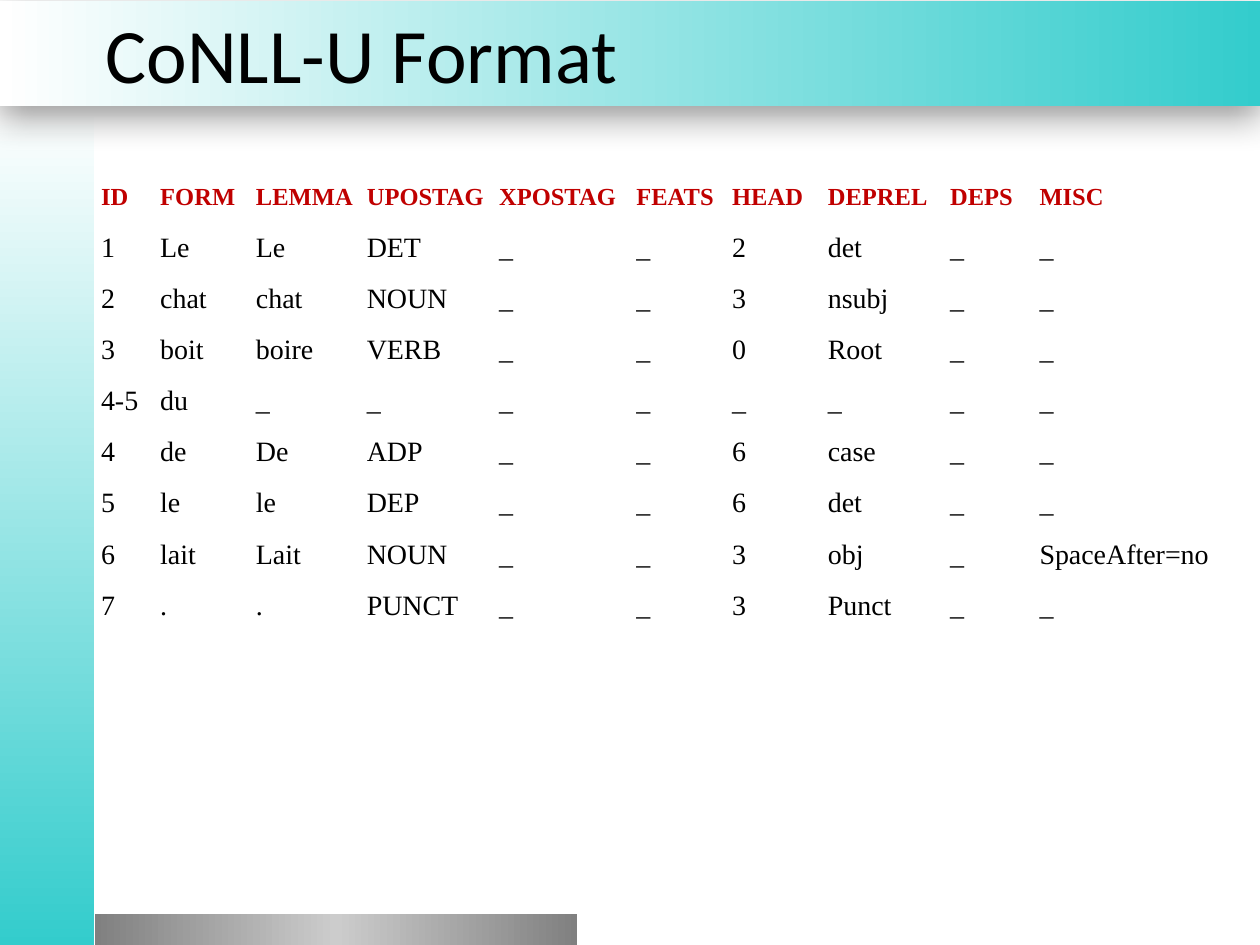
from lxml import etree
from pptx import Presentation
from pptx.dml.color import RGBColor
from pptx.enum.shapes import MSO_SHAPE as SHAPE
from pptx.enum.text import MSO_ANCHOR as ANCHOR
from pptx.oxml.ns import qn
from pptx.util import Pt

TEAL = [(0, "FFFFFF"), (100, "33CCCC")]
GREY = [(0, "808080"), (50, "CCCCCC"), (100, "808080")]
COLUMN_WIDTHS = [33.84, 54.72, 63.36, 75.6, 78.48, 54.72, 54.72, 69.84, 51.12, 132.48]
ROWS = [line.split() for line in (
    "ID FORM LEMMA UPOSTAG XPOSTAG FEATS HEAD DEPREL DEPS MISC",
    "1 Le Le DET _ _ 2 det _ _",
    "2 chat chat NOUN _ _ 3 nsubj _ _",
    "3 boit boire VERB _ _ 0 Root _ _",
    "4-5 du _ _ _ _ _ _ _ _",
    "4 de De ADP _ _ 6 case _ _",
    "5 le le DEP _ _ 6 det _ _",
    "6 lait Lait NOUN _ _ 3 obj _ SpaceAfter=no",
    "7 . . PUNCT _ _ 3 Punct _ _",
)]


def rgb(value):
    """Turn a hex string into a colour."""
    return RGBColor.from_string(value)


def style_run(r, name, size, color, bold=False):
    """Set the font of a run."""
    r.font.name = name
    r.font.size = Pt(size)
    r.font.bold = bold
    r.font.color.rgb = rgb(color)


def add_color(parent, value):
    """Append a hex colour element to an XML parent."""
    return etree.SubElement(parent, qn("a:srgbClr"), val=value)


def add_band(slide, x, y, w, h, stops, angle=0):
    """Draw a borderless rectangle with a linear gradient."""
    s = slide.shapes.add_shape(SHAPE.RECTANGLE, Pt(x), Pt(y), Pt(w), Pt(h))
    s.shadow.inherit = False
    s.line.fill.background()
    s.fill.gradient()
    s.fill.gradient_angle = angle
    stop_list = s._element.spPr.find(".//" + qn("a:gsLst"))
    stop_list.clear()
    for position, value in stops:
        stop = etree.SubElement(stop_list, qn("a:gs"), pos=str(position * 1000))
        add_color(stop, value)
    return s


def add_shadow(s, blur, distance, opacity):
    """Give a shape a soft black shadow below it."""
    effects = s._element.spPr.find(qn("a:effectLst"))
    shadow = etree.SubElement(effects, qn("a:outerShdw"), blurRad=str(Pt(blur)),
                              dist=str(Pt(distance)), dir="5400000", rotWithShape="0")
    etree.SubElement(add_color(shadow, "000000"), qn("a:alpha"), val=str(opacity * 1000))


def add_background(slide, w, h):
    """Draw the side, header and footer bands."""
    side = 54
    add_band(slide, 0, 62, side, h - 62, TEAL, 270)
    header = add_band(slide, 0, 0.7, w, 60, TEAL)
    add_shadow(header, 20, 6, 40)
    add_band(slide, side, h - 18, 276, 18, GREY)


def add_title(slide, x, y, w, h, text):
    """Write the slide title, centred vertically in its box."""
    tf = slide.shapes.add_textbox(Pt(x), Pt(y), Pt(w), Pt(h)).text_frame
    tf.word_wrap = True
    tf.vertical_anchor = ANCHOR.MIDDLE
    tf.text = text
    style_run(tf.paragraphs[0].runs[0], "Calibri", 44, "000000")


def fill_cell(cell, text, is_header):
    """Write one unfilled table cell."""
    cell.fill.background()
    cell.vertical_anchor = ANCHOR.MIDDLE
    cell.margin_left = cell.margin_right = Pt(3.75)
    cell.margin_top = cell.margin_bottom = Pt(3.75)
    cell.text = text
    size, color = (14, "C00000") if is_header else (16, "000000")
    style_run(cell.text_frame.paragraphs[0].runs[0], "Times New Roman", size, color, is_header)


def add_token_table(slide, x, y, h):
    """Place the table of annotated tokens."""
    frame = slide.shapes.add_table(len(ROWS), len(COLUMN_WIDTHS), Pt(x), Pt(y),
                                   Pt(sum(COLUMN_WIDTHS)), Pt(h))
    table = frame.table
    table.first_row = table.horz_banding = False
    for column, width in zip(table.columns, COLUMN_WIDTHS):
        column.width = Pt(width)
    for i, row in enumerate(ROWS):
        table.rows[i].height = Pt(h / len(ROWS))
        for j, text in enumerate(row):
            fill_cell(table.cell(i, j), text, i == 0)


def main():
    """Build and save the slide."""
    prs = Presentation()
    prs.slide_width, prs.slide_height = Pt(720), Pt(540)
    slide = prs.slides.add_slide(prs.slide_layouts[6])
    add_background(slide, 720, 540)
    add_title(slide, 53.3, 0, 666.7, 60, "CoNLL-U Format")
    add_token_table(slide, 54, 97.9, 262.8)
    prs.save("out.pptx")


if __name__ == "__main__":
    main()
